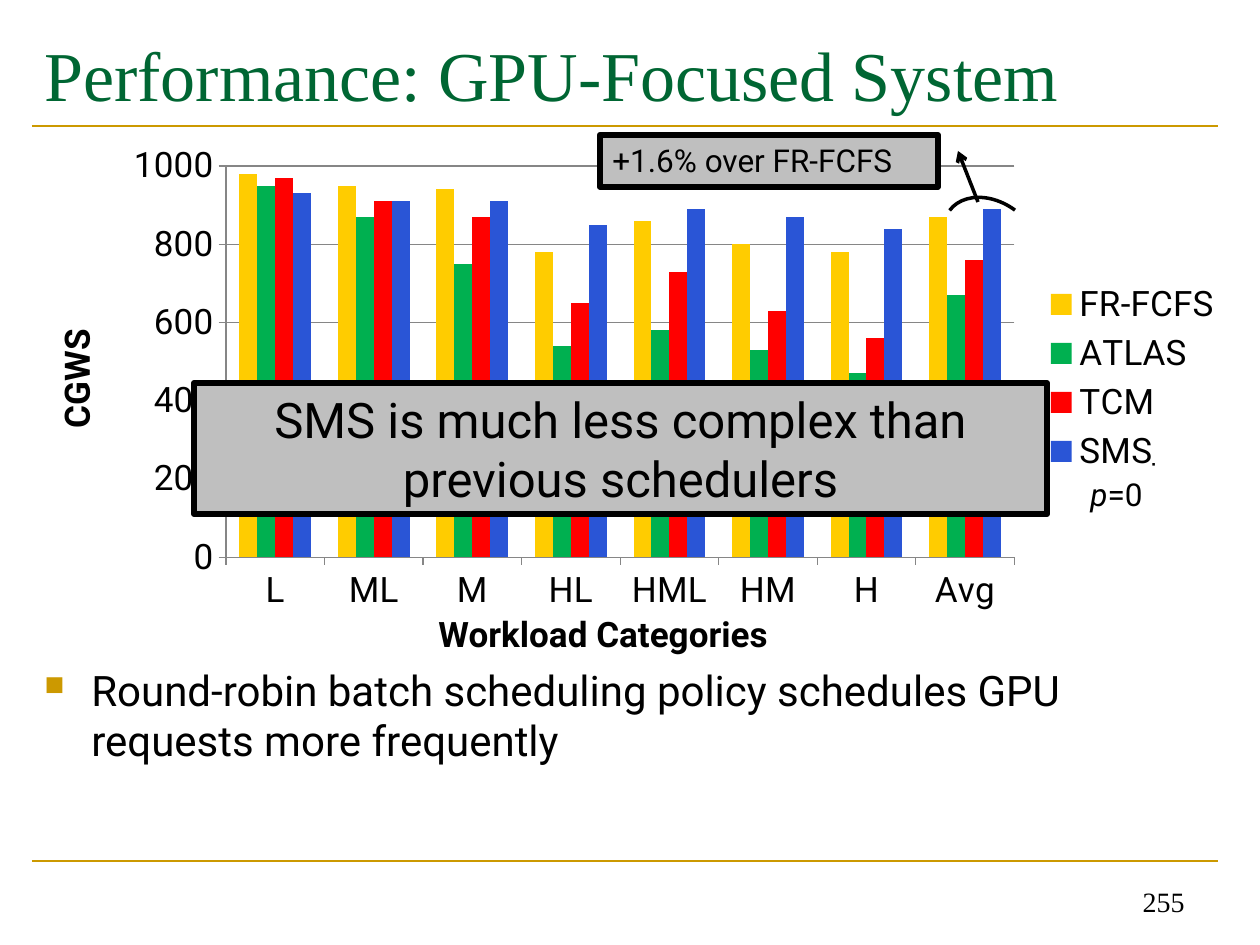
from pptx import Presentation, util as u
from pptx.chart.data import CategoryChartData
from pptx.dml.color import RGBColor
from pptx.enum import chart as ch, shapes, text
from pptx.oxml import parse_xml
from pptx.oxml.ns import nsdecls, qn

PX = 914400 / 126
FONT, SERIF = "Roboto", "Times New Roman"
BLACK, GOLD, GRAY = "000000", "CC9900", "BFBFBF"
color = RGBColor.from_string


def line(x1, y1, x2, y2, hue, width):
    item = slide.shapes.add_connector(
        shapes.MSO_CONNECTOR.STRAIGHT, *[round(v * PX) for v in (x1, y1, x2, y2)])
    item.line.color.rgb = color(hue)
    item.line.width = u.Pt(width)
    item._element.spPr.append(parse_xml(f"<a:effectLst {nsdecls('a')}/>"))
    return item


def label(box, words, size, font=FONT, hue=BLACK, fill=None, edge=False,
          align=text.PP_ALIGN.LEFT, anchor=text.MSO_ANCHOR.TOP):
    place = [round(v * PX) for v in box]
    if fill:
        item = slide.shapes.add_shape(shapes.MSO_SHAPE.RECTANGLE, *place)
        item.shadow.inherit = False
        item.fill.solid()
        item.fill.fore_color.rgb = color(fill)
        item.line.fill.background()
    else:
        item = slide.shapes.add_textbox(*place)
    if edge:
        item.line.color.rgb = color(BLACK)
        item.line.width = u.Pt(3.5)
    frame = item.text_frame
    frame.word_wrap = True
    frame.vertical_anchor = anchor
    para = frame.paragraphs[0]
    para.text = words
    para.alignment = align
    for run in para.runs:
        run.font.size = u.Pt(size)
        run.font.name = font
        run.font.color.rgb = color(hue)
    return para


deck = Presentation()
deck.slide_width, deck.slide_height = u.Inches(10), u.Inches(7.5)
slide = deck.slides.add_slide(deck.slide_layouts[6])

# Rules, title and page number
for y in (126, 861):
    line(32, y, 1218, y, GOLD, 1.5)
label((32, 21, 1187, 105), "Performance: GPU-Focused System", 40, SERIF, "006633",
      anchor=text.MSO_ANCHOR.MIDDLE)
label((903, 861, 294, 63), "255", 16, SERIF, align=text.PP_ALIGN.RIGHT,
      anchor=text.MSO_ANCHOR.BOTTOM)

# Bullet
para = label((32, 658, 1187, 120),
             "Round-robin batch scheduling policy schedules GPU requests more frequently", 24)
props = para._p.get_or_add_pPr()
props.set("marL", str(round(47 * PX)))
props.set("indent", str(round(-47 * PX)))
for xml in (f'<a:buClr {nsdecls("a")}><a:srgbClr val="{GOLD}"/></a:buClr>',
            f'<a:buSzPct {nsdecls("a")} val="65000"/>',
            f'<a:buChar {nsdecls("a")} char="■"/>'):
    props.append(parse_xml(xml))

# Chart
data = CategoryChartData()
data.categories = ["L", "ML", "M", "HL", "HML", "HM", "H", "Avg"]
rows = [
    ("FR-FCFS", "FFCC00", (980, 950, 940, 780, 860, 800, 780, 870)),
    ("ATLAS", "00B050", (950, 870, 750, 540, 580, 530, 470, 670)),
    ("TCM", "FF0000", (970, 910, 870, 650, 730, 630, 560, 760)),
    ("SMS_0", "2A55D6", (930, 910, 910, 850, 890, 870, 840, 890)),
]
for name, hue, vals in rows:
    data.add_series(name, vals)
place = [round(v * PX) for v in (25, 135, 1211, 486)]
chart = slide.shapes.add_chart(ch.XL_CHART_TYPE.COLUMN_CLUSTERED, *place, data).chart
chart.font.size = u.Pt(20)
chart.font.name = FONT
chart.font.color.rgb = color(BLACK)
chart.has_title = False
plot = chart.plots[0]
plot.gap_width = 150
plot.overlap = 0
plot.vary_by_categories = False
for bars, (name, hue, vals) in zip(plot.series, rows):
    bars.format.fill.solid()
    bars.format.fill.fore_color.rgb = color(hue)

axis = chart.value_axis
axis.minimum_scale, axis.maximum_scale, axis.major_unit = 0, 1000, 200
axis.has_title = True
title = axis.axis_title.text_frame
title.text = "CGWS"
font = title.paragraphs[0].runs[0].font
font.size, font.bold, font.name = u.Pt(20), True, FONT
for part in (axis.format, chart.category_axis.format, axis.major_gridlines.format):
    part.line.color.rgb = color("868686")
    part.line.width = u.Pt(0.75)

chart.has_legend = True
chart.legend.position = ch.XL_LEGEND_POSITION.RIGHT
chart.legend.include_in_layout = False
area = chart._chartSpace.chart.plotArea
for old in area.findall(qn("c:layout")):
    area.remove(old)
area.insert(0, parse_xml(
    f'<c:layout {nsdecls("c")}><c:manualLayout><c:layoutTarget val="inner"/>'
    '<c:xMode val="edge"/><c:yMode val="edge"/><c:x val="0.166"/><c:y val="0.064"/>'
    '<c:w val="0.651"/><c:h val="0.805"/></c:manualLayout></c:layout>'))

# Gain over the baseline
label((600, 135, 338, 52), "+1.6% over FR-FCFS", 18, fill=GRAY, edge=True)
arc = slide.shapes.add_shape(shapes.MSO_SHAPE.ARC,
                             *[round(v * PX) for v in (953, 189, 78, 105)])
arc.rotation = 306.3
arc.shadow.inherit = False
arc.fill.background()
arc.line.color.rgb = color(BLACK)
arc.line.width = u.Pt(2)
arrow = line(978, 202, 958, 151, BLACK, 2)
arrow.line._get_or_add_ln().append(parse_xml(f'<a:tailEnd {nsdecls("a")} type="arrow"/>'))

# White patches beside the last legend entry
for x, y in ((1155, 433), (1149, 467)):
    label((x, y, 79, 49), "", 18, fill="FFFFFF")

# Main message
label((194, 383, 853, 131), "SMS is much less complex than previous schedulers", 28,
      fill=GRAY, edge=True, align=text.PP_ALIGN.CENTER, anchor=text.MSO_ANCHOR.MIDDLE)

# Legend note and axis caption
para = label((1078, 469, 135, 52), "p", 18)
para.runs[0].font.italic = True
rest = para.add_run()
rest.text = "=0"
rest.font.size, rest.font.name = u.Pt(18), FONT
rest.font.color.rgb = color(BLACK)
para = label((426, 606, 396, 55), "Workload Categories", 20)
para.runs[0].font.bold = True

deck.save("out.pptx")
